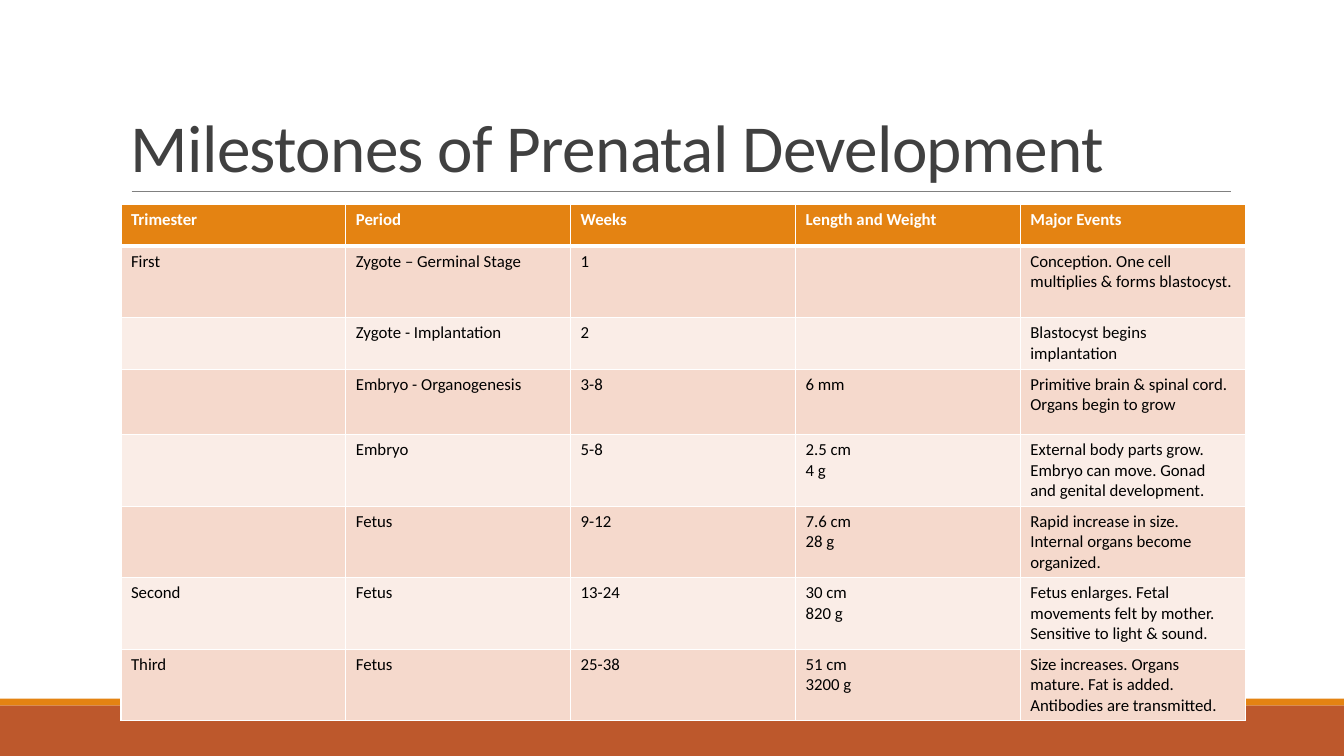
from lxml import etree
from pptx import Presentation, util as u
from pptx.dml.color import RGBColor
from pptx.enum import shapes, text
from pptx.oxml import ns

RUST = RGBColor(0xBD, 0x58, 0x2C)
ORANGE = RGBColor(0xE4, 0x83, 0x12)
ROSE = RGBColor(0xF5, 0xD9, 0xCC)
BLUSH = RGBColor(0xFA, 0xED, 0xE7)
GREY = RGBColor(0x80, 0x80, 0x80)
CHARCOAL = RGBColor(0x40, 0x40, 0x40)
BLACK = RGBColor(0, 0, 0)
WHITE = RGBColor(0xFF, 0xFF, 0xFF)

WIDTH = u.Inches(13.33)
HEIGHT = u.Inches(7.5)
FONT = "Calibri"
COLUMN = u.Inches(2.23)
ROW_HEIGHTS = [0.41, 0.71, 0.51, 0.65, 0.71, 0.71, 0.71, 0.71]
MILESTONES = [
    ["Trimester", "Period", "Weeks", "Length and Weight", "Major Events"],
    ["First", "Zygote – Germinal Stage", "1", "",
     "Conception. One cell multiplies & forms blastocyst."],
    ["", "Zygote - Implantation", "2", "", "Blastocyst begins implantation"],
    ["", "Embryo - Organogenesis", "3-8", "6 mm",
     "Primitive brain & spinal cord. Organs begin to grow"],
    ["", "Embryo", "5-8", "2.5 cm\n4 g",
     "External body parts grow.\nEmbryo can move. Gonad and genital development."],
    ["", "Fetus", "9-12", "7.6 cm\n28 g",
     "Rapid increase in size. Internal organs become organized."],
    ["Second", "Fetus", "13-24", "30 cm\n820 g",
     "Fetus enlarges. Fetal movements felt by mother. Sensitive to light & sound."],
    ["Third", "Fetus", "25-38", "51 cm\n3200 g",
     "Size increases. Organs mature. Fat is added. Antibodies are transmitted."],
]


def across(share):
    return u.Emu(round(WIDTH * share))


def down(share):
    return u.Emu(round(HEIGHT * share))


def format_text(text_frame, size, color, bold=False):
    for paragraph in text_frame.paragraphs:
        for run in paragraph.runs:
            run.font.name = FONT
            run.font.size = u.Pt(size)
            run.font.bold = bold
            run.font.color.rgb = color


def add_band(slide, top, height, color):
    band = slide.shapes.add_shape(
        shapes.MSO_SHAPE.RECTANGLE, 0, down(top), WIDTH, down(height))
    band.shadow.inherit = False
    band.fill.solid()
    band.fill.fore_color.rgb = color
    band.line.fill.background()


def add_rule(slide, left, right, top):
    rule = slide.shapes.add_connector(
        shapes.MSO_CONNECTOR.STRAIGHT,
        across(left), down(top), across(right), down(top))
    rule.line.color.rgb = GREY
    rule.line.width = u.Pt(0.5)
    etree.SubElement(rule._element.spPr, ns.qn("a:effectLst"))


def add_title(slide, wording):
    title = slide.shapes.add_textbox(
        across(0.09), down(0.04), across(0.825), down(0.213))
    frame = title.text_frame
    frame.word_wrap = True
    frame.vertical_anchor = text.MSO_ANCHOR.BOTTOM
    frame.text = wording
    frame.paragraphs[0].line_spacing = 0.85
    format_text(frame, 48, CHARCOAL)
    frame.paragraphs[0].runs[0]._r.get_or_add_rPr().set("spc", "-50")


def set_borders(cell, top, bottom):
    properties = cell._tc.get_or_add_tcPr()
    widths = {"a:lnL": 1, "a:lnR": 1, "a:lnT": top, "a:lnB": bottom}
    for position, (side, width) in enumerate(widths.items()):
        line = etree.Element(ns.qn(side), w=str(u.Pt(width)))
        fill = etree.SubElement(line, ns.qn("a:solidFill"))
        etree.SubElement(fill, ns.qn("a:srgbClr"), val=str(WHITE))
        properties.insert(position, line)


def fill_cell(cell, wording, row):
    header = row == 0
    cell.text_frame.text = wording
    format_text(cell.text_frame, 12, WHITE if header else BLACK, header)
    cell.fill.solid()
    cell.fill.fore_color.rgb = ORANGE if header else (BLUSH, ROSE)[row % 2]
    set_borders(cell, top=3 if row == 1 else 1, bottom=3 if header else 1)


def add_milestones(slide):
    columns = len(MILESTONES[0])
    table = slide.shapes.add_table(
        len(MILESTONES), columns, across(0.09), down(0.271),
        COLUMN * columns, u.Inches(sum(ROW_HEIGHTS))).table
    for column in table.columns:
        column.width = COLUMN
    for row, (height, entries) in enumerate(zip(ROW_HEIGHTS, MILESTONES)):
        table.rows[row].height = u.Inches(height)
        for column, wording in enumerate(entries):
            fill_cell(table.cell(row, column), wording, row)


def main():
    presentation = Presentation()
    presentation.slide_width = WIDTH
    presentation.slide_height = HEIGHT
    slide = presentation.slides.add_slide(presentation.slide_layouts[6])
    add_band(slide, 0.933, 0.067, RUST)
    add_band(slide, 0.924, 0.009, ORANGE)
    add_rule(slide, 0.098, 0.916, 0.253)
    add_title(slide, "Milestones of Prenatal Development")
    add_milestones(slide)
    presentation.save("out.pptx")


if __name__ == "__main__":
    main()
